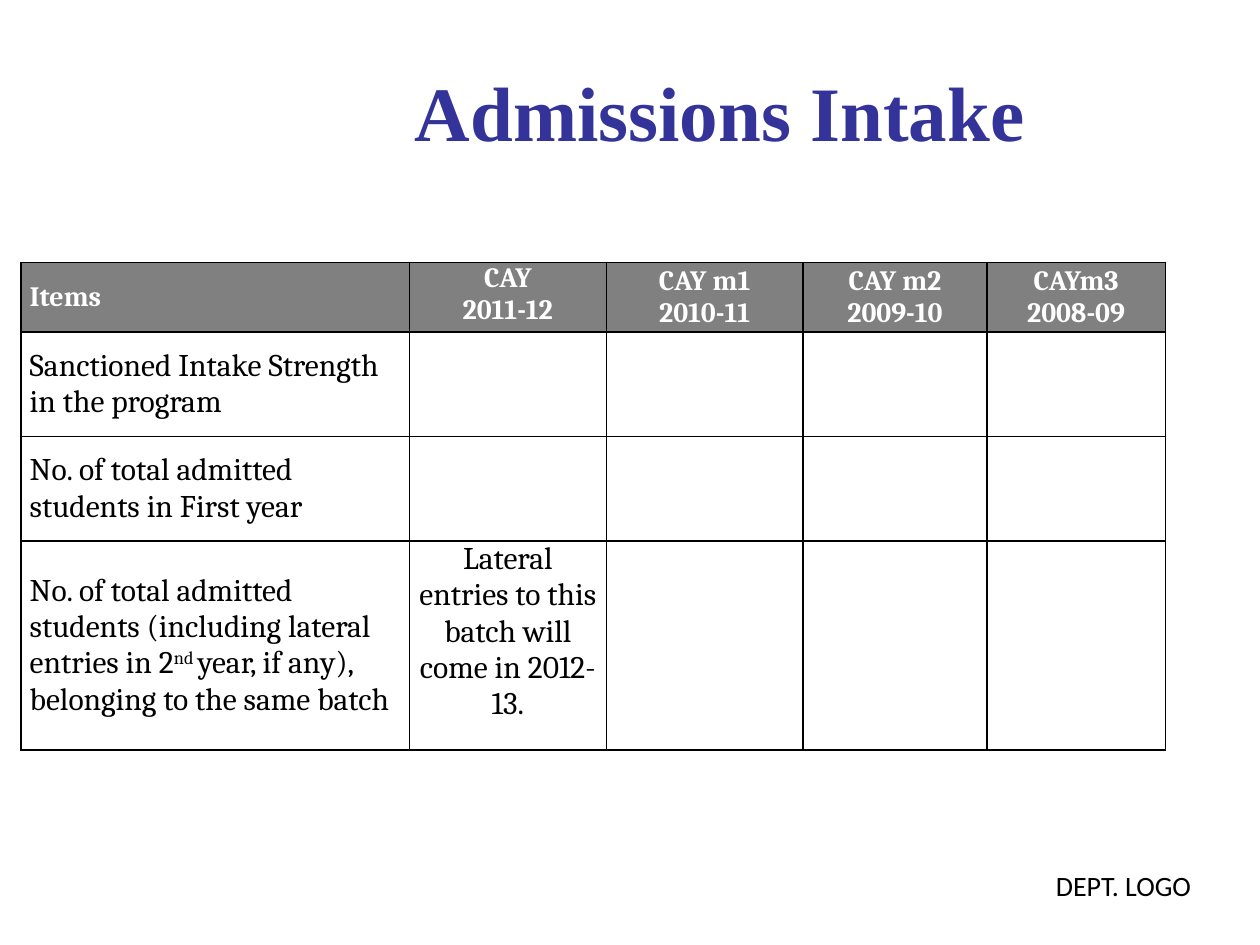
from dataclasses import dataclass

from lxml.etree import SubElement
from pptx import Presentation
from pptx.dml.color import RGBColor
from pptx.enum.shapes import MSO_SHAPE
from pptx.enum.text import MSO_ANCHOR, PP_ALIGN
from pptx.oxml.ns import qn
from pptx.util import Pt


@dataclass(frozen=True)
class Theme:
    black: RGBColor = RGBColor(0, 0, 0)
    white: RGBColor = RGBColor(255, 255, 255)
    grey: RGBColor = RGBColor(0x80, 0x80, 0x80)
    indigo: RGBColor = RGBColor(0x33, 0x33, 0x99)
    title_font: str = "Times New Roman"
    table_font: str = "Cambria"
    label_font: str = "Calibri"
    title_size: int = 44
    body_size: int = 18
    small_size: int = 16
    border: float = 1


@dataclass(frozen=True)
class Box:
    left: float
    top: float
    width: float
    height: float

    def lengths(self):
        return Pt(self.left), Pt(self.top), Pt(self.width), Pt(self.height)


THEME = Theme()
COLUMN_WIDTHS = (222, 112.5, 112.5, 105, 102)
ROW_HEIGHTS = (39.6, 59.76, 59.76, 119.52)
YEARS = (
    ("CAY", "2011-12"),
    ("CAY m1", "2010-11"),
    ("CAY m2", "2009-10"),
    ("CAYm3", "2008-09"),
)
SUPERSCRIPT = "nd "
ITEMS = (
    ("Sanctioned Intake Strength in the program",),
    ("No. of total admitted students in First year",),
    (
        "No. of total admitted students (including lateral entries in 2",
        SUPERSCRIPT,
        "year, if any), belonging to the same batch",
    ),
)
LATERAL_NOTE = "Lateral entries to this batch will come in 2012-13."


def add_span(para, text, font, size, color, bold=False):
    span = para.add_run()
    span.text = text
    span.font.name = font
    span.font.size = Pt(size)
    span.font.color.rgb = color
    span.font.bold = bold
    return span


def add_title(page, box):
    frame = page.shapes.add_textbox(*box.lengths()).text_frame
    frame.word_wrap = True
    frame.vertical_anchor = MSO_ANCHOR.MIDDLE
    para = frame.paragraphs[0]
    para.alignment = PP_ALIGN.CENTER
    add_span(para, "Admissions Intake ", THEME.title_font, THEME.title_size,
             THEME.indigo, bold=True)


def add_department_label(page, box):
    label = page.shapes.add_shape(MSO_SHAPE.RECTANGLE, *box.lengths())
    label.shadow.inherit = False
    label.fill.solid()
    label.fill.fore_color.rgb = THEME.white
    label.line.fill.background()
    label.text_frame.vertical_anchor = MSO_ANCHOR.MIDDLE
    para = label.text_frame.paragraphs[0]
    para.alignment = PP_ALIGN.CENTER
    add_span(para, "DEPT. LOGO", THEME.label_font, THEME.small_size, THEME.black)


def add_borders(cell):
    """Draw all four cell edges; they must come before the fill in the XML."""
    properties = cell._tc.get_or_add_tcPr()
    for position, side in enumerate(("lnL", "lnR", "lnT", "lnB")):
        edge = SubElement(properties, qn(f"a:{side}"), w=str(Pt(THEME.border)))
        fill = SubElement(edge, qn("a:solidFill"))
        SubElement(fill, qn("a:srgbClr"), val=str(THEME.black))
        properties.insert(position, edge)


def format_cell(cell, is_header):
    cell.margin_left = cell.margin_right = Pt(5)
    cell.margin_top = cell.margin_bottom = 0
    if is_header:
        cell.fill.solid()
        cell.fill.fore_color.rgb = THEME.grey
    else:
        cell.fill.background()
    add_borders(cell)


def fill_cell(cell, lines, is_header=False, centred=False, anchor=MSO_ANCHOR.MIDDLE):
    """Write one paragraph per line, each line being a sequence of runs."""
    cell.vertical_anchor = anchor
    size = THEME.small_size if is_header else THEME.body_size
    color = THEME.white if is_header else THEME.black
    frame = cell.text_frame
    for index, texts in enumerate(lines):
        para = frame.add_paragraph() if index else frame.paragraphs[0]
        para.alignment = PP_ALIGN.CENTER if centred else PP_ALIGN.LEFT
        for text in texts:
            span = add_span(para, text, THEME.table_font, size, color, is_header)
            if text == SUPERSCRIPT:
                span._r.get_or_add_rPr().set("baseline", "30000")


def add_intake_table(page, box):
    table = page.shapes.add_table(
        len(ROW_HEIGHTS), len(COLUMN_WIDTHS), *box.lengths()).table
    table.first_row = table.horz_banding = False
    for column, width in zip(table.columns, COLUMN_WIDTHS):
        column.width = Pt(width)
    for index, (row, height) in enumerate(zip(table.rows, ROW_HEIGHTS)):
        row.height = Pt(height)
        for cell in row.cells:
            format_cell(cell, is_header=index == 0)

    fill_cell(table.cell(0, 0), [["Items"]], is_header=True)
    for column, year in enumerate(YEARS, start=1):
        anchor = MSO_ANCHOR.TOP if column == 1 else MSO_ANCHOR.MIDDLE
        fill_cell(table.cell(0, column), [[line] for line in year],
                  is_header=True, centred=True, anchor=anchor)
    for row, item in enumerate(ITEMS, start=1):
        fill_cell(table.cell(row, 0), [item])
    fill_cell(table.cell(3, 1), [[LATERAL_NOTE]], centred=True, anchor=MSO_ANCHOR.TOP)


def main():
    deck = Presentation()
    deck.slide_width, deck.slide_height = Pt(720), Pt(540)
    page = deck.slides.add_slide(deck.slide_layouts[6])
    add_department_label(page, Box(564, 471.6, 156, 68.4))
    add_intake_table(page, Box(12, 150, sum(COLUMN_WIDTHS), sum(ROW_HEIGHTS)))
    add_title(page, Box(132, 6, 570, 114))
    deck.save("out.pptx")


if __name__ == "__main__":
    main()
